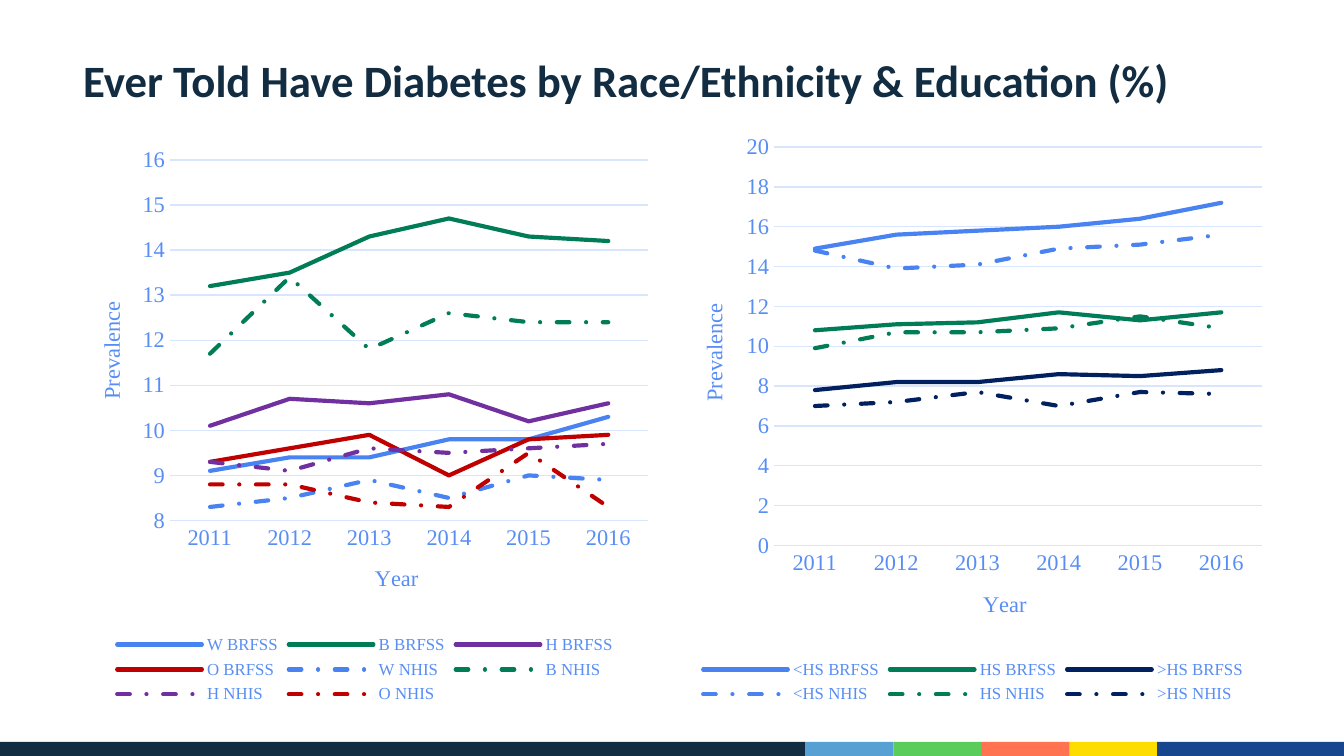
"""Build a slide with two line charts of diabetes prevalence."""
from lxml.etree import SubElement
from pptx import Presentation
from pptx.chart.data import CategoryChartData
from pptx.dml.color import RGBColor
from pptx.enum.chart import XL_CHART_TYPE, XL_LEGEND_POSITION, XL_TICK_MARK
from pptx.enum.dml import MSO_LINE
from pptx.enum.shapes import MSO_SHAPE
from pptx.oxml import parse_xml
from pptx.oxml.ns import nsdecls, qn
from pptx.util import Inches, Pt

THEME = {
    "navy": "122C41", "sky": "56A0D3", "lime": "5ACC5A", "coral": "FF7351",
    "gold": "FDDC00", "royal": "17468F", "text": "588EF4", "grid": "D8E5FC",
    "blue": "4983F2", "green": "007D57", "purple": "7030A0", "red": "C00000",
    "ink": "002060", "head": 24, "axis": 12, "key": 9, "line": 2.25, "rule": 0.75,
    "sans": "Calibri", "serif": "Times New Roman",
}
TITLE = "Ever Told Have Diabetes by Race/Ethnicity & Education (%)"
YEARS = ["2011", "2012", "2013", "2014", "2015", "2016"]
CHARTS = [
    {
        "box": (0.52, 1.02, 4.39, 4.26), "scale": (8, 16, 1),
        "plot": (0.17, 0.04, 0.81, 0.63),
        "year": (0.51, 0.74), "rate": (0.04, 0.28),
        "rows": [
            ("W BRFSS", "blue", [9.1, 9.4, 9.4, 9.8, 9.8, 10.3]),
            ("B BRFSS", "green", [13.2, 13.5, 14.3, 14.7, 14.3, 14.2]),
            ("H BRFSS", "purple", [10.1, 10.7, 10.6, 10.8, 10.2, 10.6]),
            ("O BRFSS", "red", [9.3, 9.6, 9.9, 9, 9.8, 9.9]),
            ("W NHIS", "blue", [8.3, 8.5, 8.9, 8.5, 9, 8.9]),
            ("B NHIS", "green", [11.7, 13.4, 11.8, 12.6, 12.4, 12.4]),
            ("H NHIS", "purple", [9.3, 9.1, 9.6, 9.5, 9.6, 9.7]),
            ("O NHIS", "red", [8.8, 8.8, 8.4, 8.3, 9.5, 8.3]),
        ],
    },
    {
        "box": (5, 0.92, 4.48, 4.36), "scale": (0, 20, 2),
        "plot": (0.17, 0.04, 0.81, 0.68),
        "year": (0.51, 0.79), "rate": (0.04, 0.3),
        "rows": [
            ("<HS BRFSS", "blue", [14.9, 15.6, 15.8, 16, 16.4, 17.2]),
            ("HS BRFSS", "green", [10.8, 11.1, 11.2, 11.7, 11.3, 11.7]),
            (">HS BRFSS", "ink", [7.8, 8.2, 8.2, 8.6, 8.5, 8.8]),
            ("<HS NHIS", "blue", [14.8, 13.9, 14.1, 14.9, 15.1, 15.6]),
            ("HS NHIS", "green", [9.9, 10.7, 10.7, 10.9, 11.5, 10.9]),
            (">HS NHIS", "ink", [7, 7.2, 7.7, 7, 7.7, 7.6]),
        ],
    },
]
BANDS = [("navy", 5.99), ("sky", 0.66), ("lime", 0.65), ("coral", 0.66),
         ("gold", 0.65), ("royal", 1.39)]


def apply(item, values):
    for name, value in values.items():
        setattr(item, name, value)


def tint(name):
    return RGBColor.from_string(THEME[name])


def style(font, size, color="text", face="serif", bold=False):
    apply(font, {"size": Pt(THEME[size]), "name": THEME[face], "bold": bold})
    font.color.rgb = tint(color)


def stroke(line, color, width):
    line.color.rgb = tint(color)
    line.width = Pt(THEME[width])


def place(node, index, spots):
    for old in node.findall(qn("c:layout")):
        node.remove(old)
    layout = parse_xml(f"<c:layout {nsdecls('c')}/>")
    manual = SubElement(layout, qn("c:manualLayout"))
    if len(spots) == 4:
        SubElement(manual, qn("c:layoutTarget")).set("val", "inner")
    for mode in ("xMode", "yMode"):
        SubElement(manual, qn("c:" + mode)).set("val", "edge")
    for side, spot in zip("xywh", spots):
        SubElement(manual, qn("c:" + side)).set("val", str(spot))
    node.insert(index, layout)


def label(axis, text, spot):
    frame = axis.axis_title.text_frame
    frame.text = text
    style(frame.paragraphs[0].runs[0].font, "axis")
    place(axis.axis_title._element, 1, spot)
    apply(axis, {"major_tick_mark": XL_TICK_MARK.NONE,
                 "minor_tick_mark": XL_TICK_MARK.NONE})
    style(axis.tick_labels.font, "axis")


def draw(slide, panel):
    data = CategoryChartData(number_format="General")
    data.categories = YEARS
    for name, _, values in panel["rows"]:
        data.add_series(name, values)
    box = [Inches(n) for n in panel["box"]]
    chart = slide.shapes.add_chart(XL_CHART_TYPE.LINE, *box, data).chart
    apply(chart, {"has_title": False, "has_legend": True})
    style(chart.font, "axis")
    apply(chart.legend, {"position": XL_LEGEND_POSITION.BOTTOM,
                         "include_in_layout": False})
    style(chart.legend.font, "key")
    years, rates = chart.category_axis, chart.value_axis
    label(years, "Year", panel["year"])
    label(rates, "Prevalence", panel["rate"])
    stroke(years.format.line, "grid", "rule")
    low, high, step = panel["scale"]
    apply(rates, {"minimum_scale": low, "maximum_scale": high,
                  "major_unit": step, "has_major_gridlines": True})
    rates.format.line.fill.background()
    stroke(rates.major_gridlines.format.line, "grid", "rule")
    place(chart._chartSpace.chart.plotArea, 0, panel["plot"])
    plot = chart.plots[0]
    plot.vary_by_categories = False
    for row, (name, color, _) in zip(plot.series, panel["rows"]):
        row.smooth = False
        line = row.format.line
        stroke(line, color, "line")
        if name.endswith("NHIS"):
            line.dash_style = MSO_LINE.DASH_DOT
        row.format.line._ln.set("cap", "rnd")


def main():
    deck = Presentation()
    wide = Inches(10)
    apply(deck, {"slide_width": wide, "slide_height": wide * 9 // 16})
    slide = deck.slides.add_slide(deck.slide_layouts[6])
    left = 0
    for color, width in BANDS:
        band = slide.shapes.add_shape(
            MSO_SHAPE.RECTANGLE, Inches(left), Inches(5.52), Inches(width), Inches(0.11))
        band.shadow.inherit = False
        band.fill.solid()
        band.fill.fore_color.rgb = tint(color)
        band.line.fill.background()
        left += width
    head = slide.shapes.add_textbox(
        Inches(0.52), Inches(0.34), Inches(9.04), Inches(0.5)).text_frame
    apply(head, {"word_wrap": True, "text": TITLE})
    style(head.paragraphs[0].runs[0].font, "head", "navy", "sans", True)
    for chart in CHARTS:
        draw(slide, chart)
    deck.save("out.pptx")


if __name__ == "__main__":
    main()
